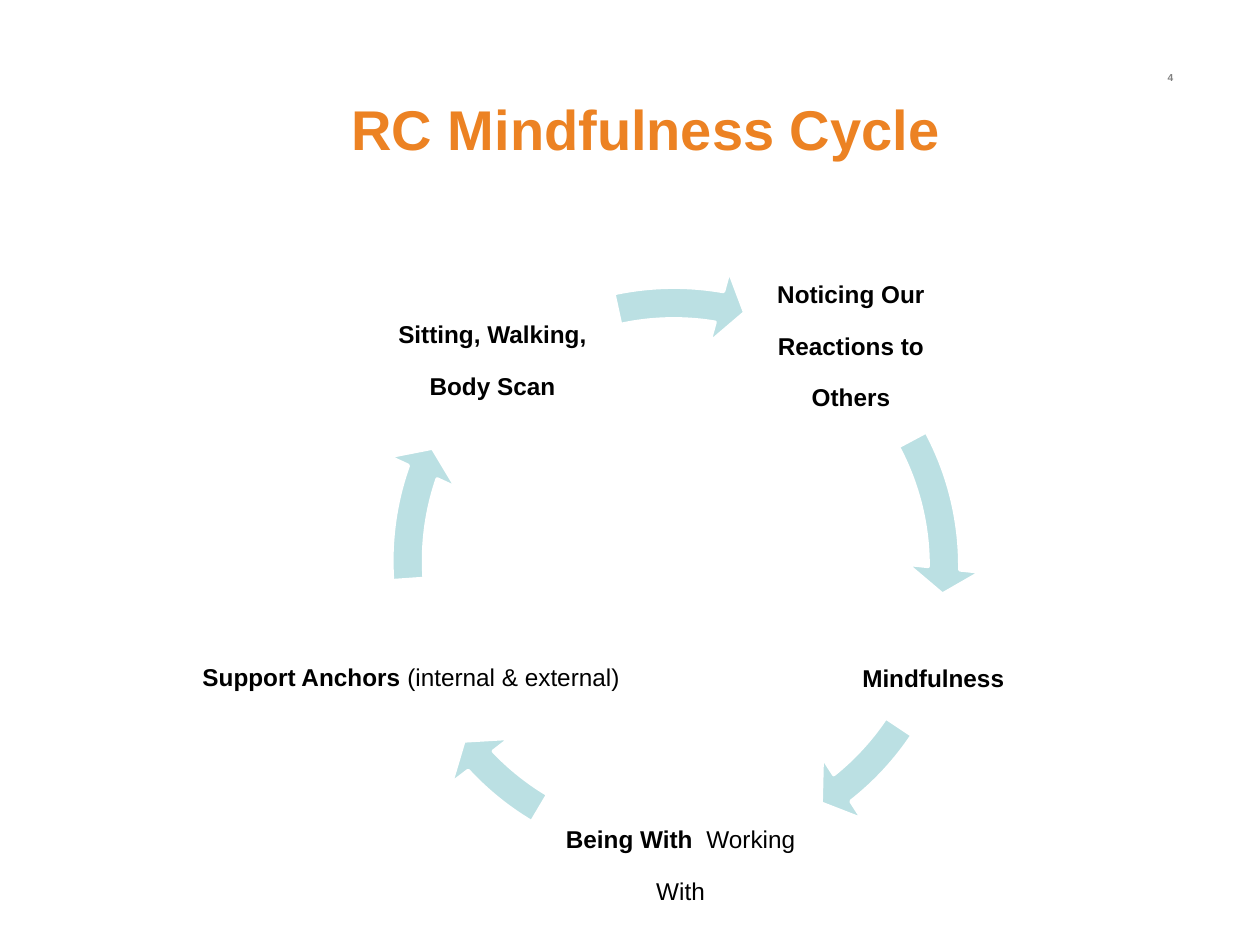
from dataclasses import dataclass

from pptx import Presentation
from pptx import util as u
from pptx.dml.color import RGBColor
from pptx.enum import shapes, text


@dataclass(frozen=True)
class Theme:
    font: str = "Arial"
    title: str = "EC8223"
    body: str = "000000"
    muted: str = "808080"
    arrow: str = "BBE0E3"
    outline: str = "FFFFFF"
    title_size: int = 32
    body_size: int = 24
    number_size: int = 10


THEME = Theme()
LOWERED = "-25000"  # baseline offset, thousandths of a percent
ARROW_SIZE = 12.29  # cm

# Each step: box (left, top, width, height in cm), bold text, regular text
STEPS = [
    ((15.01, 5.13, 4.29, 3.02), "Noticing Our Reactions to Others", ""),
    ((16.15, 11.99, 5.33, 2.69), "Mindfulness", ""),
    ((10.85, 15.47, 5.74, 3.28), "Being With  ", "Working With"),
    ((3.45, 11.68, 9.68, 3.28), "Support Anchors ", "(internal & external)"),
    ((7.44, 5.33, 4.98, 3.2), "Sitting, Walking, Body Scan", ""),
]

# Each arrow: left, top in cm, start and end angle in degrees
ARROWS = [
    (7.49, 5.26, 331.82, 0.52),
    (7.49, 5.51, 33.7, 51.65),
    (7.49, 5.51, 120.7, 136.94),
    (7.47, 5.16, 175.96, 199.31),
    (7.44, 5.36, 257.78, 279.77),
]


def format_run(r, size, color, bold=True, lowered=False):
    r.font.name = THEME.font
    r.font.size = u.Pt(size)
    r.font.bold = bold
    r.font.color.rgb = RGBColor.from_string(color)
    if lowered:
        r.font._element.set("baseline", LOWERED)


def add_title(s, title):
    sp = s.shapes.title
    sp.left, sp.top, sp.width, sp.height = map(u.Cm, (0.64, 0.46, 24.76, 2.92))
    tf = sp.text_frame
    tf.text = title
    tf.vertical_anchor = text.MSO_ANCHOR.BOTTOM
    p = tf.paragraphs[0]
    p.alignment = text.PP_ALIGN.CENTER
    format_run(p.runs[0], THEME.title_size, THEME.title)


def add_number(s, number):
    sp = s.shapes.add_textbox(*map(u.Cm, (18.62, 1.07, 5.28, 0.84)))
    tf = sp.text_frame
    tf.word_wrap = True
    tf.text = number
    p = tf.paragraphs[0]
    p.alignment = text.PP_ALIGN.RIGHT
    format_run(p.runs[0], THEME.number_size, THEME.muted, lowered=True)


def add_step(s, box, strong, plain):
    tf = s.shapes.add_textbox(*map(u.Cm, box)).text_frame
    tf.word_wrap = True
    tf.vertical_anchor = text.MSO_ANCHOR.MIDDLE
    tf.margin_left = tf.margin_right = u.Cm(0.08)
    tf.margin_top = tf.margin_bottom = u.Cm(0.08)
    p = tf.paragraphs[0]
    p.alignment = text.PP_ALIGN.CENTER
    p.line_spacing = 0.9
    for words, bold in ((strong, True), (plain, False)):
        if words:
            r = p.add_run()
            r.text = words
            format_run(r, THEME.body_size, THEME.body, bold, lowered=True)


def add_arrow(s, left, top, start, end):
    sp = s.shapes.add_shape(
        shapes.MSO_SHAPE.CIRCULAR_ARROW,
        u.Cm(left), u.Cm(top), u.Cm(ARROW_SIZE), u.Cm(ARROW_SIZE))
    # Thickness, head angle, end, start, head width; one degree is 0.6
    values = (0.052, 5.59 * 0.6, end * 0.6, start * 0.6, 0.061)
    for i, value in enumerate(values):
        sp.adjustments[i] = value
    sp.shadow.inherit = False
    sp.fill.solid()
    sp.fill.fore_color.rgb = RGBColor.from_string(THEME.arrow)
    sp.line.color.rgb = RGBColor.from_string(THEME.outline)
    sp.line.width = u.Pt(2)


def main():
    prs = Presentation()
    prs.slide_width, prs.slide_height = u.Cm(25.4), u.Cm(19.05)
    s = prs.slides.add_slide(prs.slide_layouts[5])

    # Heading and slide number
    add_number(s, "4")
    add_title(s, "RC Mindfulness Cycle")

    # Cycle: each step is followed by the arrow to the next
    for step, arrow in zip(STEPS, ARROWS):
        add_step(s, *step)
        add_arrow(s, *arrow)

    prs.save("out.pptx")


if __name__ == "__main__":
    main()
